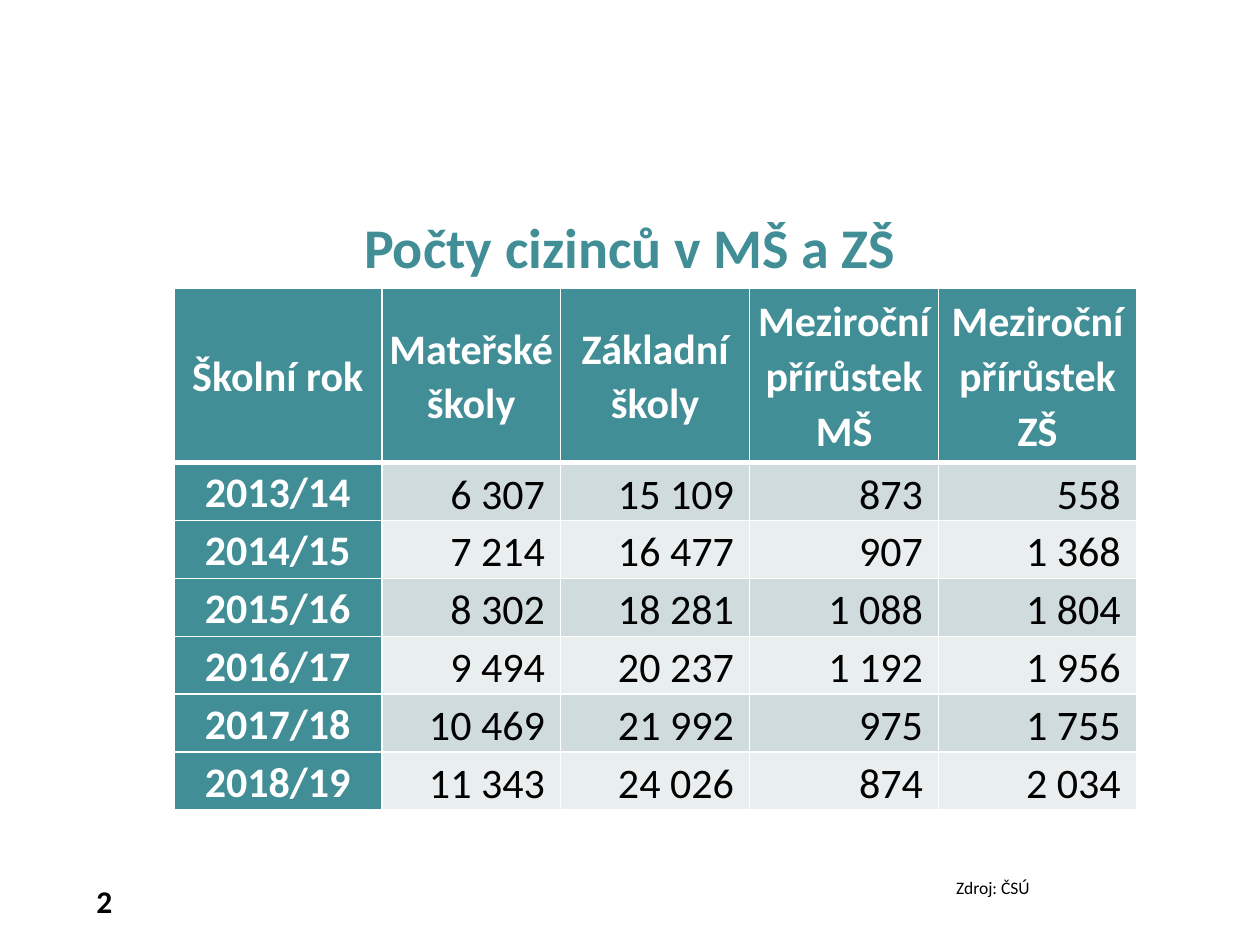
from dataclasses import dataclass

from lxml import etree
from pptx import Presentation
from pptx.dml.color import RGBColor
from pptx.enum import text
from pptx.oxml.ns import qn
from pptx.util import Emu, Pt


@dataclass(frozen=True)
class Theme:
    font: str = "Calibri"
    teal: str = "418E96"
    dark_band: str = "CFDBDD"
    light_band: str = "E9EEEF"
    white: str = "FFFFFF"
    black: str = "000000"
    title: int = 32
    table: int = 24
    number: int = 18
    source: int = 10
    thin: int = 1
    thick: int = 3


theme = Theme()
PX = 9144
ALIGN = text.PP_ALIGN
ANCHOR = text.MSO_ANCHOR


def write(frame, words, size, color, bold, align, spacing=1):
    para = frame.paragraphs[0]
    para.alignment = align
    para.line_spacing = spacing
    span = para.add_run()
    span.text = words
    span.font.name = theme.font
    span.font.size = Pt(size)
    span.font.bold = bold
    span.font.color.rgb = RGBColor.from_string(color)
    return para


def add_border(cell, side, points):
    properties = cell._tc.get_or_add_tcPr()
    line = etree.SubElement(properties, qn(f"a:ln{side}"), w=str(Pt(points)))
    fill = etree.SubElement(line, qn("a:solidFill"))
    etree.SubElement(fill, qn("a:srgbClr"), val=theme.white)


deck = Presentation()
deck.slide_width = Emu(1000 * PX)
deck.slide_height = Emu(750 * PX)
page = deck.slides.add_slide(deck.slide_layouts[5])

title = page.shapes.title
title.left, title.top, title.width, title.height = [Emu(n * PX) for n in (277, 170, 446, 59)]
title.text_frame.word_wrap = False
title.text_frame.auto_size = text.MSO_AUTO_SIZE.NONE
title.text_frame.vertical_anchor = ANCHOR.TOP
write(title.text_frame, "Počty cizinců v MŠ a ZŠ", theme.title, theme.teal, True, ALIGN.CENTER, 0.9)

rows = [
    ("Školní rok", "Mateřské školy", "Základní školy", "Meziroční přírůstek MŠ", "Meziroční přírůstek ZŠ"),
    ("2013/14", "6 307", "15 109", "873", "558"),
    ("2014/15", "7 214", "16 477", "907", "1 368"),
    ("2015/16", "8 302", "18 281", "1 088", "1 804"),
    ("2016/17", "9 494", "20 237", "1 192", "1 956"),
    ("2017/18", "10 469", "21 992", "975", "1 755"),
    ("2018/19", "11 343", "24 026", "874", "2 034"),
]
column_widths = [165, 142, 150, 150, 157]
row_heights = [138] + [46] * 6

table = page.shapes.add_table(
    len(rows), len(column_widths), Emu(138 * PX), Emu(229 * PX),
    Emu(sum(column_widths) * PX), Emu(sum(row_heights) * PX),
).table
table.first_col = True
for column, width in zip(table.columns, column_widths):
    column.width = Emu(width * PX)
for row, height in zip(table.rows, row_heights):
    row.height = Emu(height * PX)

for r, values in enumerate(rows):
    for c, value in enumerate(values):
        cell = table.cell(r, c)
        heading = r == 0 or c == 0
        cell.margin_left = cell.margin_right = Emu(5 * PX)
        cell.margin_top = cell.margin_bottom = 0
        cell.vertical_anchor = ANCHOR.MIDDLE if heading else ANCHOR.BOTTOM
        add_border(cell, "L", theme.thin)
        add_border(cell, "R", theme.thin)
        add_border(cell, "T", theme.thick if r == 1 else theme.thin)
        add_border(cell, "B", theme.thick if r == 0 else theme.thin)
        band = theme.dark_band if r % 2 else theme.light_band
        cell.fill.solid()
        cell.fill.fore_color.rgb = RGBColor.from_string(theme.teal if heading else band)
        write(
            cell.text_frame,
            value if heading else f"{value} ",
            theme.table,
            theme.white if heading else theme.black,
            heading,
            ALIGN.CENTER if heading else ALIGN.RIGHT,
            1.07,
        )

number = page.shapes.add_textbox(*[Emu(n * PX) for n in (28, 695, 71, 40)])
number.text_frame.word_wrap = True
number.text_frame.vertical_anchor = ANCHOR.MIDDLE
write(number.text_frame, "2", theme.number, theme.black, True, ALIGN.RIGHT)

source = page.shapes.add_textbox(*[Emu(n * PX) for n in (617, 690, 214, 28)])
source.text_frame.word_wrap = True
para = write(source.text_frame, "Zdroj: ČSÚ", theme.source, theme.black, False, ALIGN.JUSTIFY, 1.07)
para._p.get_or_add_pPr().set("marL", str(132 * PX))

deck.save("out.pptx")
